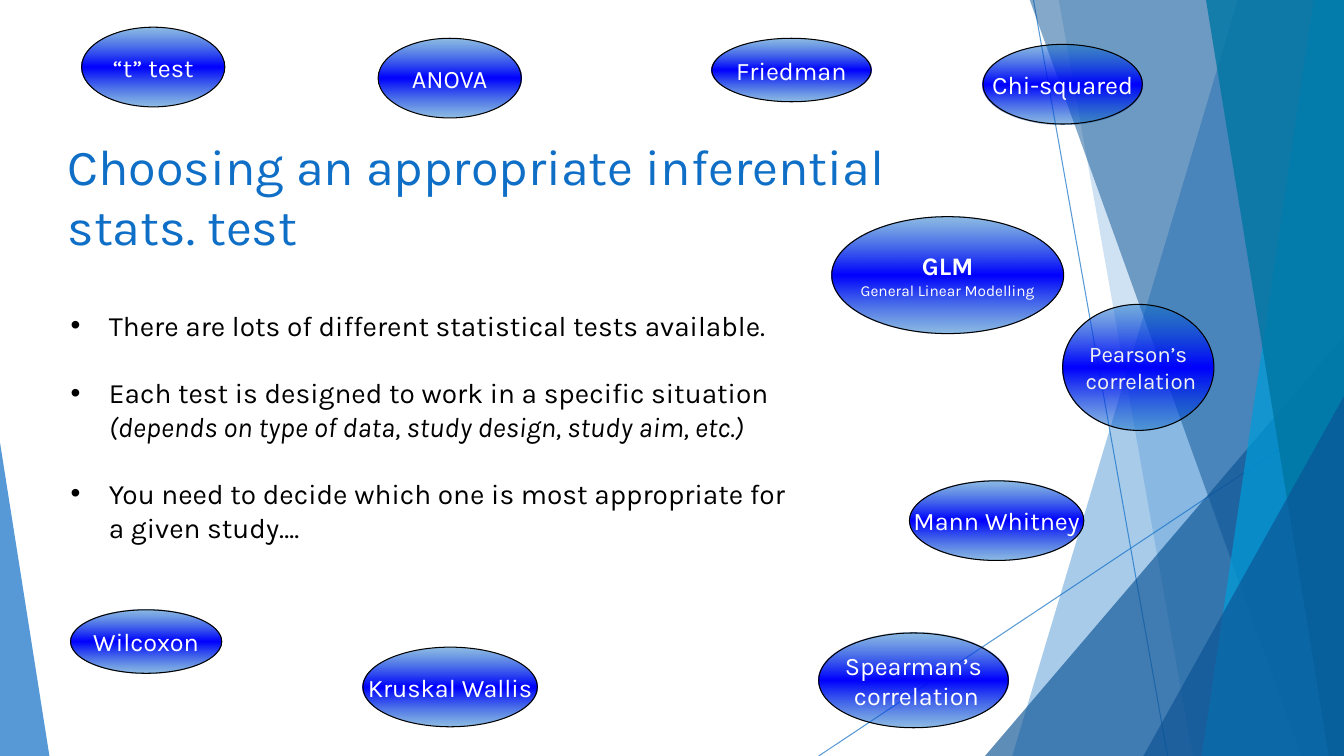
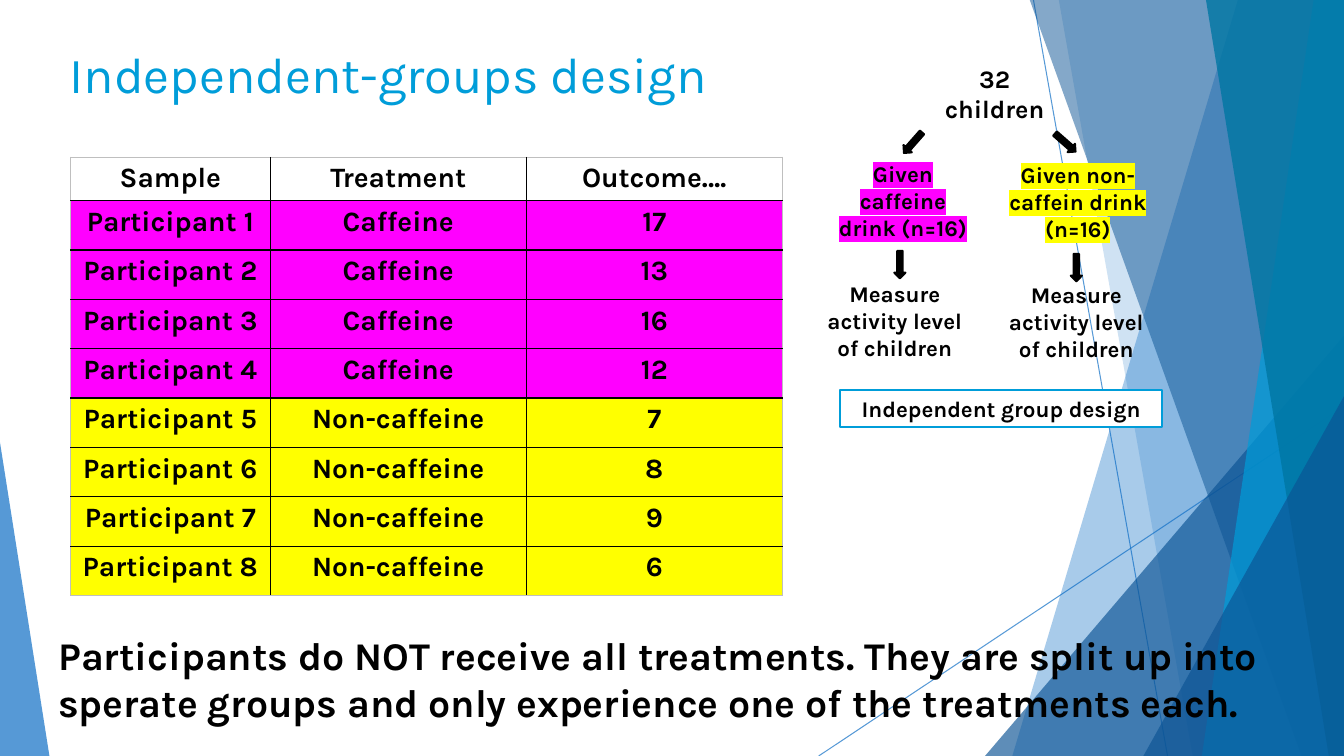
"""Build two slides on choosing a statistical test and on independent groups."""
from dataclasses import dataclass
from typing import Any, Optional, Union

import lxml.etree
import pptx
import pptx.dml.color
import pptx.enum.shapes
import pptx.enum.text
import pptx.oxml.ns
import pptx.presentation
import pptx.slide
import pptx.util

Inches = pptx.util.Inches
Pt = pptx.util.Pt
RGBColor = pptx.dml.color.RGBColor
Kind = pptx.enum.shapes.MSO_SHAPE
Align = pptx.enum.text.PP_ALIGN
Anchor = pptx.enum.text.MSO_ANCHOR
Box = tuple[float, float, float, float]

FONT = "Karla"
WIDE, HIGH = 13.33, 7.5
BLACK = RGBColor(0x00, 0x00, 0x00)
WHITE = RGBColor(0xFF, 0xFF, 0xFF)
PALE = RGBColor(0xF2, 0xF2, 0xF2)
GREY = RGBColor(0xBF, 0xBF, 0xBF)
BLUE = RGBColor(0x0F, 0x6F, 0xC6)
NAVY = RGBColor(0x0B, 0x53, 0x94)
CYAN = RGBColor(0x00, 0x9D, 0xD9)
TEAL = RGBColor(0x00, 0x76, 0xA3)
VIVID = RGBColor(0x00, 0x00, 0xFF)
PINK = RGBColor(0xFF, 0x00, 0xFF)
YELLOW = RGBColor(0xFF, 0xFF, 0x00)


@dataclass(frozen=True)
class Run:
    """A stretch of text in one style."""
    text: str
    size: float
    hue: RGBColor = BLACK
    bold: bool = False
    slant: bool = False
    mark: Optional[RGBColor] = None


@dataclass(frozen=True)
class Ray:
    """A thin line of the backdrop."""
    start: tuple[float, float]
    end: tuple[float, float]


@dataclass(frozen=True)
class Pane:
    """A sheet from a slanted left edge to the right side."""
    top: float
    base: float
    hue: RGBColor
    alpha: int


@dataclass(frozen=True)
class Wedge:
    """A right-angled triangle standing on the bottom edge."""
    box: Box
    peak: float
    hue: RGBColor
    alpha: int


@dataclass(frozen=True)
class Bubble:
    """An ellipse that names a test."""
    box: Box
    lines: tuple[Run, ...]


@dataclass(frozen=True)
class Label:
    """A centred bold text of the study chart."""
    box: Box
    text: str
    size: float = 16
    mark: Optional[RGBColor] = None


@dataclass(frozen=True)
class Arrow:
    """A small block arrow, turned by an angle."""
    left: float
    top: float
    turn: float


SCENE: list[Union[Ray, Pane, Wedge]] = [
    Ray((10.25, 0), (11.58, HIGH)),
    Ray((WIDE, 4.03), (8.12, HIGH)),
    Pane(12.28, 10.04, BLUE, 36),
    Pane(10.5, 11.83, BLUE, 20),
    Wedge((9.77, 3.33, 3.56, 4.17), 1, NAVY, 66),
    Pane(10.21, 12.91, NAVY, 50),
    Pane(13.03, 11.92, CYAN, 70),
    Pane(11.96, 13.18, TEAL, 80),
    Wedge((11.34, 3.93, 1.99, 3.57), 1, NAVY, 66),
    Wedge((0, 4.39, 0.49, 3.11), 0, BLUE, 70),
]


def white(*words: str) -> tuple[Run, ...]:
    """Give each line the common bubble style."""
    return tuple(Run(word, 18, WHITE) for word in words)


BUBBLES = [
    Bubble((9.02, 4.77, 1.73, 0.79), white("Mann Whitney")),
    Bubble((0.81, 0.27, 1.42, 0.79), white("“t” test")),
    Bubble((10.54, 3.02, 1.5, 1.25),
           (Run("Pearson’s", 16, PALE), Run(" correlation", 16, PALE))),
    Bubble((3.75, 0.38, 1.42, 0.79), white("ANOVA")),
    Bubble((9.75, 0.44, 1.58, 0.79), white("Chi-squared")),
    Bubble((3.6, 6.42, 1.73, 0.79), white("Kruskal Wallis")),
    Bubble((0.7, 6.05, 1.5, 0.63), white("Wilcoxon")),
    Bubble((7.06, 0.38, 1.58, 0.63), white("Friedman")),
    Bubble((8.12, 6.28, 1.88, 0.94), white("Spearman’s", " correlation")),
    Bubble((8.25, 2.15, 2.3, 1.16),
           (Run("GLM", 18, WHITE, True), Run("General Linear Modelling", 11, WHITE))),
]
POINTS = [
    [Run("There are lots of different statistical tests available.", 20)],
    [Run("Each test is designed to work in a specific situation ", 20),
     Run("(depends on type of data, study design, study aim, etc.)", 20, slant=True)],
    [Run("You need to decide which one is most appropriate for a given study….", 20)],
]
HEADS = ("Sample", "Treatment", "Outcome….")
SCORES = (17, 13, 16, 12, 7, 8, 9, 6)
NOTE = ("Participants do NOT receive all treatments. They are split up into "
        "sperate groups and only experience one of the treatments each.")
MEASURE = "Measure activity level of children"
LABELS = [
    Label((9.18, 0.58, 1.37, 0.71), "32 children", 18),
    Label((9.83, 1.55, 1.72, 0.91), "Given non-caffein drink (n=16)", mark=YELLOW),
    Label((8.14, 1.54, 1.63, 0.91), "Given caffeine drink (n=16)", mark=PINK),
    Label((8.06, 2.73, 1.63, 0.91), MEASURE),
    Label((9.86, 2.74, 1.63, 0.91), MEASURE),
]
ARROWS = [Arrow(10.43, 1.36, 41.3), Arrow(8.92, 1.36, 131.3),
          Arrow(10.54, 2.6, 90), Arrow(8.79, 2.57, 90)]


def sub(node: Any, tag: str, **attrs: str) -> Any:
    """Append a DrawingML child."""
    return lxml.etree.SubElement(node, pptx.oxml.ns.qn(tag), attrs)


def tint(node: Any, hue: RGBColor, alpha: Optional[int] = None) -> None:
    """Append a colour, see-through if alpha is given."""
    color = sub(node, "a:srgbClr", val=str(hue))
    if alpha is not None:
        sub(color, "a:alpha", val=str(alpha * 1000))


def fade(shape: Any, alpha: int) -> None:
    """Make the colours of a shape see-through."""
    for color in shape.element.iter(pptx.oxml.ns.qn("a:srgbClr")):
        sub(color, "a:alpha", val=str(alpha * 1000))


def span(box: Box) -> tuple[Any, ...]:
    """Turn inches into lengths."""
    return tuple(Inches(side) for side in box)


def write(frame: Any, paras: list[list[Run]], align: Any = Align.LEFT) -> None:
    """Fill a text frame run by run."""
    frame.auto_size = pptx.enum.text.MSO_AUTO_SIZE.NONE
    for place, runs in enumerate(paras):
        para = frame.add_paragraph() if place else frame.paragraphs[0]
        para.alignment = align
        for item in runs:
            run = para.add_run()
            run.text = item.text
            font = run.font
            font.name, font.size = FONT, Pt(item.size)
            font.bold, font.italic = item.bold, item.slant
            font.color.rgb = item.hue
            if item.mark is not None:
                props = run.font.fill._xPr
                mark = sub(props, "a:highlight")
                tint(mark, item.mark)
                props.find(pptx.oxml.ns.qn("a:solidFill")).addnext(mark)


def place(shape: Any, box: Box) -> None:
    """Move and size a shape."""
    shape.left, shape.top, shape.width, shape.height = span(box)


def head(slide: pptx.slide.Slide, text: str, box: Box, hue: RGBColor) -> None:
    """Set the slide title."""
    title = slide.shapes.title
    place(title, box)
    title.text_frame.vertical_anchor = Anchor.TOP
    write(title.text_frame, [[Run(text, 36, hue)]])


def text_box(slide: pptx.slide.Slide, box: Box, run: Run, align: Any) -> None:
    """Add a wrapped text box."""
    frame = slide.shapes.add_textbox(*span(box)).text_frame
    frame.word_wrap = True
    write(frame, [[run]], align)


def solid(shapes: Any, kind: Any, box: Box, hue: RGBColor) -> Any:
    """Add a plain filled shape without shadow or line."""
    shape = shapes.add_shape(kind, *span(box))
    shape.shadow.inherit = False
    shape.fill.solid()
    shape.fill.fore_color.rgb = hue
    shape.line.fill.background()
    return shape


def edge(shape: Any, hue: RGBColor, width: float) -> None:
    """Outline a shape."""
    shape.line.color.rgb = hue
    shape.line.width = Pt(width)


def draw_ray(shapes: Any, ray: Ray) -> None:
    """Draw a backdrop line."""
    line = shapes.add_connector(pptx.enum.shapes.MSO_CONNECTOR.STRAIGHT,
                                *span(ray.start + ray.end))
    edge(line, BLUE, 0.75)
    sub(line.element.spPr, "a:effectLst")
    fade(line, 70)


def draw_pane(shapes: Any, pane: Pane) -> None:
    """Draw a backdrop sheet."""
    dots = [span(dot) for dot in ((WIDE, -0.01), (WIDE, HIGH), (pane.base, HIGH))]
    form = shapes.build_freeform(Inches(pane.top), Inches(-0.01))
    form.add_line_segments(dots, close=True)
    shape = form.convert_to_shape()
    shape.shadow.inherit = False
    shape.fill.solid()
    shape.fill.fore_color.rgb = pane.hue
    shape.line.fill.background()
    fade(shape, pane.alpha)


def draw_wedge(shapes: Any, wedge: Wedge) -> None:
    """Draw a backdrop triangle."""
    shape = solid(shapes, Kind.ISOSCELES_TRIANGLE, wedge.box, wedge.hue)
    shape.adjustments[0] = wedge.peak
    fade(shape, wedge.alpha)


def backdrop(deck: pptx.presentation.Presentation, slide: pptx.slide.Slide) -> None:
    """Draw the shared scene and hand it to the master."""
    group = slide.shapes.add_group_shape()
    tools = {Ray: draw_ray, Pane: draw_pane, Wedge: draw_wedge}
    for part in SCENE:
        tools[type(part)](group.shapes, part)
    for count, props in enumerate(group.element.iter(pptx.oxml.ns.qn("p:cNvPr")), 100):
        props.set("id", str(count))
    deck.slide_master.shapes.element.append(group.element)


def draw_bubble(slide: pptx.slide.Slide, bubble: Bubble) -> None:
    """Draw an ellipse with a three-stop gradient."""
    shape = solid(slide.shapes, Kind.OVAL, bubble.box, BLUE)
    edge(shape, BLACK, 0.75)
    props = shape.element.spPr
    old = props.find(pptx.oxml.ns.qn("a:solidFill"))
    grad = sub(props, "a:gradFill", rotWithShape="1")
    stops = sub(grad, "a:gsLst")
    for spot, hue, alpha in ((0, BLUE, 46), (50, VIVID, None), (100, BLUE, 46)):
        tint(sub(stops, "a:gs", pos=str(spot * 1000)), hue, alpha)
    sub(grad, "a:lin", ang="5400000", scaled="1")
    props.replace(old, grad)
    shape.text_frame.word_wrap = False
    shape.text_frame.vertical_anchor = Anchor.MIDDLE
    write(shape.text_frame, [[run] for run in bubble.lines], Align.CENTER)


def draw_cell(cell: Any, text: str, hue: Optional[RGBColor], rims: list[bool]) -> None:
    """Style a cell; rims tells which sides lie on the outside."""
    write(cell.text_frame, [[Run(text, 20, bold=True)]], Align.CENTER)
    props = cell._tc.get_or_add_tcPr()
    for side, rim in zip("LRTB", rims):
        line = sub(props, f"a:ln{side}", w=str(Pt(0.5 if rim else 1)))
        tint(sub(line, "a:solidFill"), GREY if rim else BLACK)
    if hue is None:
        cell.fill.background()
    else:
        cell.fill.solid()
        cell.fill.fore_color.rgb = hue


def draw_table(slide: pptx.slide.Slide) -> None:
    """Draw the table of participants."""
    rows: list[tuple[tuple[str, ...], Optional[RGBColor]]] = [(HEADS, None)]
    for count, score in enumerate(SCORES, 1):
        drug, hue = ("Caffeine", PINK) if count <= 4 else ("Non-caffeine", YELLOW)
        rows.append(((f"Participant {count}", drug, str(score)), hue))
    last = len(rows) - 1
    table = slide.shapes.add_table(len(rows), 3, *span((0.7, 1.56, 7.06, 4.37))).table
    table.first_row = table.horz_banding = False
    for column, width in zip(table.columns, (1.98, 2.54, 2.54)):
        column.width = Inches(width)
    for r, (texts, hue) in enumerate(rows):
        table.rows[r].height = Inches(0.49 if r else 0.43)
        for c, text in enumerate(texts):
            draw_cell(table.cell(r, c), text, hue, [c == 0, c == 2, r == 0, r == last])


def tests_slide(deck: pptx.presentation.Presentation) -> None:
    """Build the slide on choosing a test."""
    slide = deck.slides.add_slide(deck.slide_layouts[1])
    backdrop(deck, slide)
    head(slide, "Choosing an appropriate inferential stats. test", (0.57, 1.29, 9.4, 1.44), BLUE)
    body = slide.placeholders[1]
    place(body, (0.6, 3.01, 7.42, 2.79))
    write(body.text_frame, POINTS)
    for count, para in enumerate(body.text_frame.paragraphs):
        props = para._p.get_or_add_pPr()
        props.set("marL", str(Inches(0.38)))
        props.set("indent", str(Inches(-0.38)))
        sub(props, "a:buChar", char="•")
        para.space_before = Pt(24 if count else 0)
    for bubble in BUBBLES:
        draw_bubble(slide, bubble)


def groups_slide(deck: pptx.presentation.Presentation) -> None:
    """Build the slide on independent groups."""
    slide = deck.slides.add_slide(deck.slide_layouts[5])
    head(slide, "Independent-groups design", (0.59, 0.38, 11.78, 1.81), CYAN)
    draw_table(slide)
    text_box(slide, (0.48, 6.21, 12.85, 1.04), Run(NOTE, 28, bold=True), Align.LEFT)
    for label in LABELS:
        run = Run(label.text, label.size, bold=True, mark=label.mark)
        text_box(slide, label.box, run, Align.CENTER)
    for arrow in ARROWS:
        shape = solid(slide.shapes, Kind.RIGHT_ARROW, (arrow.left, arrow.top, 0.27, 0.11), BLACK)
        edge(shape, BLACK, 1.5)
        shape.rotation = arrow.turn
    plate = solid(slide.shapes, Kind.RECTANGLE, (8.33, 3.87, 3.2, 0.37), WHITE)
    edge(plate, CYAN, 1.5)
    plate.text_frame.vertical_anchor = Anchor.MIDDLE
    write(plate.text_frame, [[Run("Independent group design", 16, bold=True)]], Align.CENTER)


def main() -> None:
    """Build and save the deck."""
    deck = pptx.Presentation()
    deck.slide_width, deck.slide_height = Inches(WIDE), Inches(HIGH)
    tests_slide(deck)
    groups_slide(deck)
    deck.save("out.pptx")


if __name__ == "__main__":
    main()
